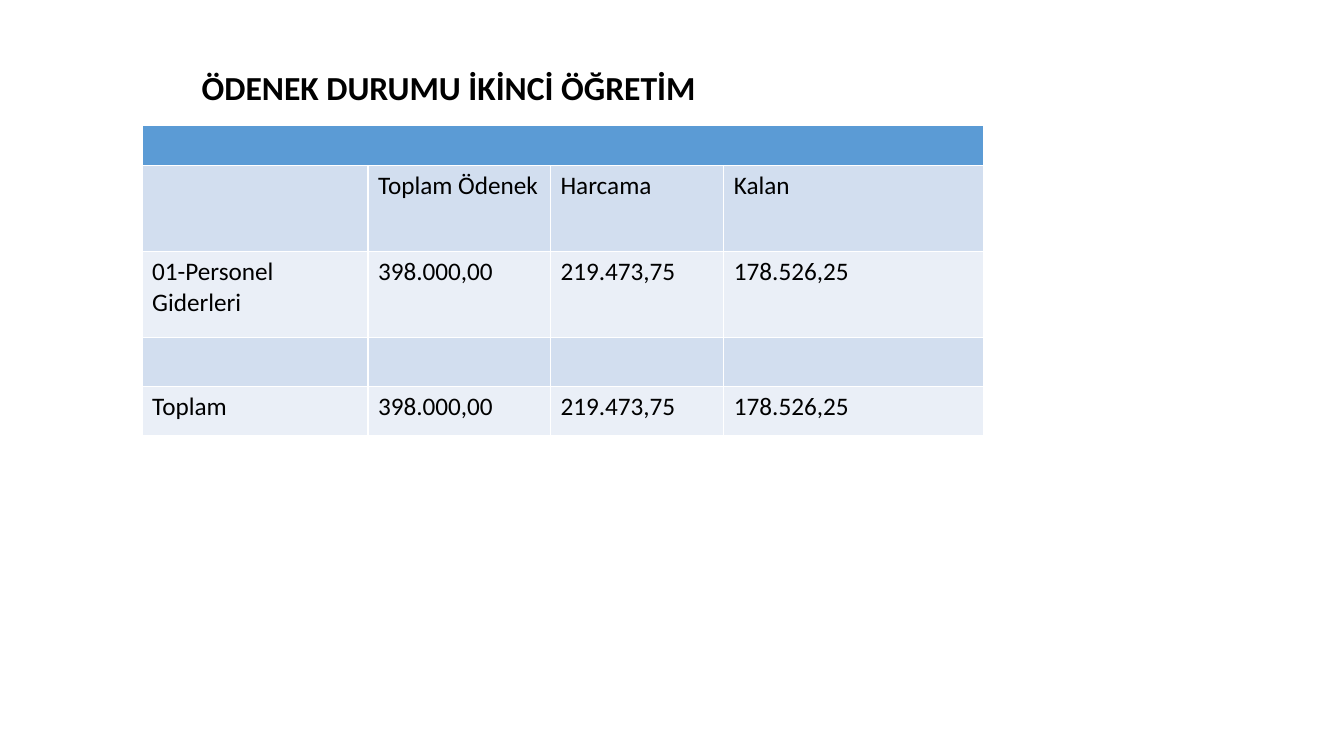
from pptx import Presentation
from pptx.dml.color import RGBColor
from pptx.enum.text import MSO_ANCHOR, PP_ALIGN
from pptx.util import Inches, Pt


def style_text(paragraph, size, bold=False):
    paragraph.alignment = PP_ALIGN.LEFT
    paragraph.font.size = Pt(size)
    for run in paragraph.runs:
        run.font.name = "Calibri"
        run.font.size = Pt(size)
        run.font.bold = bold
        run.font.color.rgb = RGBColor.from_string("000000")


def fill_cell(cell, color):
    cell.fill.solid()
    cell.fill.fore_color.rgb = RGBColor.from_string(color)


prs = Presentation()
prs.slide_width, prs.slide_height = Inches(13.33), Inches(7.5)
slide = prs.slides.add_slide(prs.slide_layouts[5])

title = slide.shapes.title
title.left, title.top = Inches(1.9), Inches(0.4)
title.width, title.height = Inches(10.52), Inches(0.98)
title.text_frame.text = "ÖDENEK DURUMU İKİNCİ ÖĞRETİM"
title.text_frame.vertical_anchor = MSO_ANCHOR.MIDDLE
title.text_frame.paragraphs[0].line_spacing = 0.9
style_text(title.text_frame.paragraphs[0], 24, bold=True)

amounts = ["398.000,00", "219.473,75", "178.526,25"]
budget_rows = [
    ["", "", "", ""],
    ["", "Toplam Ödenek", "Harcama", "Kalan"],
    ["01-Personel Giderleri", *amounts],
    ["", "", "", ""],
    ["Toplam", *amounts],
]
column_widths = [2.24, 1.81, 1.72, 2.58]
row_heights = [0.4, 0.85, 0.85, 0.49, 0.49]
row_colors = ["5B9BD5", "D2DEEF", "EAEFF7", "D2DEEF", "EAEFF7"]

# The default table style supplies the white rules between the cells.
budget = slide.shapes.add_table(
    len(budget_rows), len(column_widths), Inches(1.41), Inches(1.24),
    Inches(sum(column_widths)), Inches(sum(row_heights))).table
for column, width in zip(budget.columns, column_widths):
    column.width = Inches(width)
for row, height, color, texts in zip(budget.rows, row_heights, row_colors, budget_rows):
    row.height = Inches(height)
    for cell, text in zip(row.cells, texts):
        cell.text_frame.text = text
        fill_cell(cell, color)
        style_text(cell.text_frame.paragraphs[0], 18)
budget.cell(0, 0).merge(budget.cell(0, len(column_widths) - 1))

prs.save("out.pptx")
